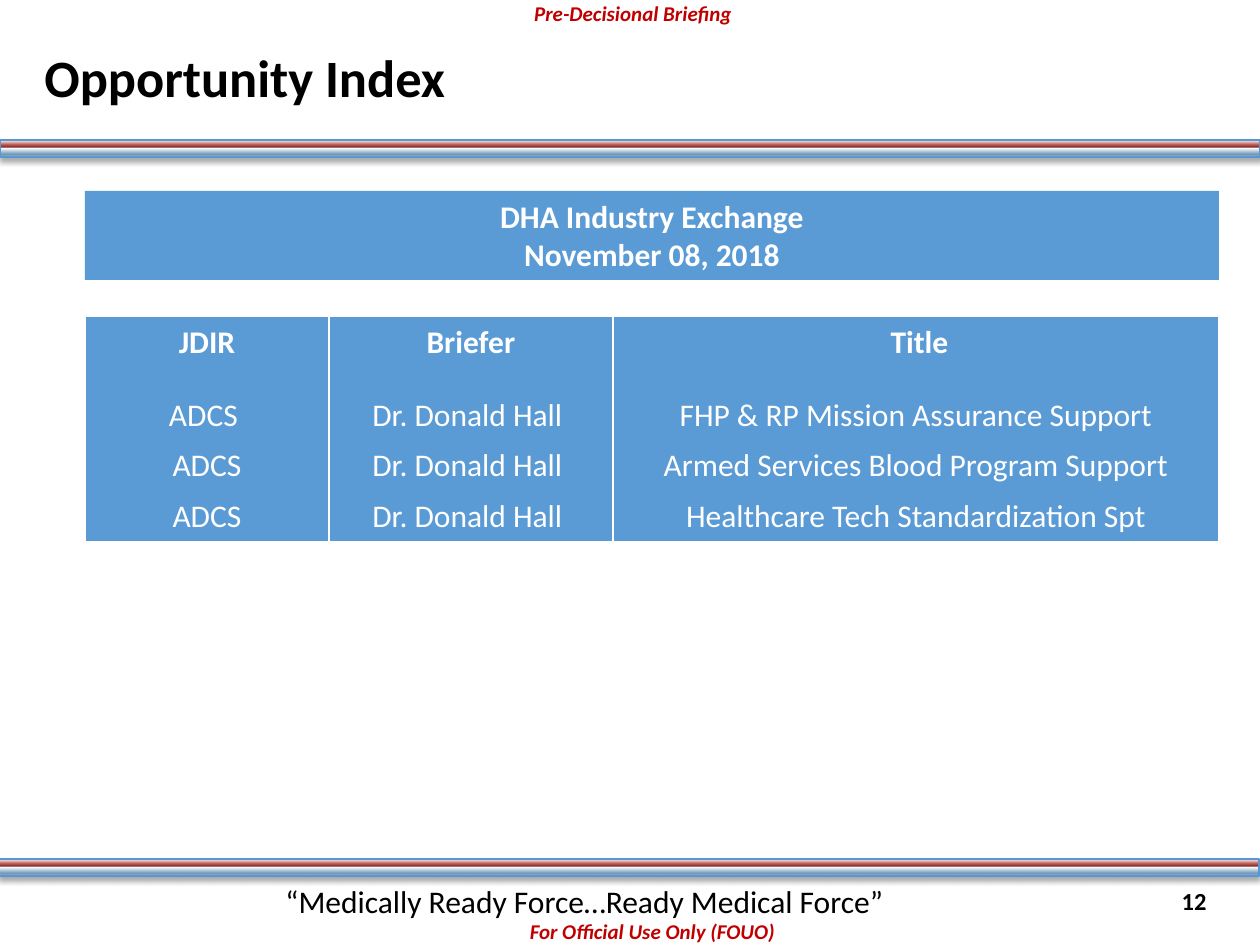
from lxml import etree
from pptx import Presentation
from pptx import util as u
from pptx.dml.color import RGBColor
from pptx.enum import shapes, text
from pptx.oxml import parse_xml
from pptx.oxml.ns import nsdecls, qn

BLUE, RED, WHITE, BLACK = "5B9BD5", "C00000", "FFFFFF", "000000"
CENTER, LEFT, RIGHT = text.PP_ALIGN.CENTER, text.PP_ALIGN.LEFT, text.PP_ALIGN.RIGHT
MIDDLE, TOP = text.MSO_ANCHOR.MIDDLE, text.MSO_ANCHOR.TOP


def px(*lengths):
    """Turn pixels, 126 to the inch, into a list of EMU."""
    return [u.Emu(round(length * 914400 / 126)) for length in lengths]


def write(frame, lines, size, color, align=CENTER, bold=False, italic=False):
    for i, line in enumerate(lines):
        paragraph = frame.paragraphs[0] if i == 0 else frame.add_paragraph()
        paragraph.text = line
        paragraph.alignment = align
        font = paragraph.font
        font.name, font.size, font.bold, font.italic = "Calibri", u.Pt(size), bold, italic
        font.color.rgb = RGBColor.from_string(color)


prs = Presentation()
prs.slide_width, prs.slide_height = px(1260, 945)
slide = prs.slides.add_slide(prs.slide_layouts[6])

# Striped bands below the title and above the footer
stripes = [(0, "DCEBF5"), (8, "83A7C3"), (13, "768FB9"), (21, "83A7C3"), (52, "FFFFFF"),
           (56, "9C6563"), (58, "80302D"), (71, "C0524E"), (94, "EBDAD4"), (100, "55261C")]
for left, top in [(0, 140), (-1, 859)]:
    band = slide.shapes.add_shape(shapes.MSO_SHAPE.RECTANGLE, *px(left, top, 1260, 17))
    band.line.color.rgb = RGBColor.from_string("5698D3")
    band.line.width = u.Pt(0.75)
    band.fill.gradient()
    band.fill.gradient_angle = 90
    props = band._element.spPr
    stops = props.find(".//" + qn("a:gsLst"))
    for stop in list(stops):
        stops.remove(stop)
    for percent, color in stripes:
        stop = etree.SubElement(stops, qn("a:gs"), pos=str(percent * 1000))
        etree.SubElement(stop, qn("a:srgbClr"), val=color)
    band.shadow.inherit = False
    props.find(qn("a:effectLst")).append(parse_xml(
        f'<a:outerShdw {nsdecls("a")} blurRad="39370" dist="22860" dir="5400000" rotWithShape="0">'
        '<a:srgbClr val="000000"><a:alpha val="35000"/></a:srgbClr></a:outerShdw>'))

# Markings, title, motto and page number
captions = [
    ("For Official Use Only (FOUO)", (267, 912, 771, 38), 12, RED, CENTER, True, True, TOP),
    ("Pre-Decisional Briefing", (510, -6, 246, 38), 12, RED, CENTER, True, True, TOP),
    ("Opportunity Index", (32, 0, 806, 154), 30, BLACK, LEFT, True, False, MIDDLE),
    ("“Medically Ready Force…Ready Medical Force”", (273, 876, 725, 50),
     18, BLACK, LEFT, False, False, TOP),
    ("12", (1135, 876, 84, 50), 14, BLACK, RIGHT, True, False, MIDDLE),
]
for words, place, size, color, align, bold, italic, anchor in captions:
    frame = slide.shapes.add_textbox(*px(*place)).text_frame
    frame.word_wrap = True
    frame.vertical_anchor = anchor
    write(frame, [words], size, color, align, bold, italic)

# Event banner
banner = slide.shapes.add_shape(shapes.MSO_SHAPE.RECTANGLE, *px(85, 191, 1134, 89))
banner.shadow.inherit = False
banner.fill.solid()
banner.fill.fore_color.rgb = RGBColor.from_string(BLUE)
banner.line.fill.background()
banner.text_frame.vertical_anchor = TOP
write(banner.text_frame, ["DHA Industry Exchange", "November 08, 2018"], 18, WHITE, bold=True)

# Briefing schedule
briefings = [
    ("JDIR", "Briefer", " Title"),
    ("ADCS ", "Dr. Donald Hall ", "FHP & RP Mission Assurance Support"),
    ("ADCS", "Dr. Donald Hall ", "Armed Services Blood Program Support"),
    ("ADCS", "Dr. Donald Hall ", "Healthcare Tech Standardization Spt"),
]
schedule = slide.shapes.add_table(4, 3, *px(85, 317, 1134, 224)).table
schedule.first_row = schedule.horz_banding = False
NO_STYLE = "{2D5ABB26-0587-4C30-8999-92F81FD0307C}"
schedule._tbl.tblPr.find(qn("a:tableStyleId")).text = NO_STYLE
for column, width in zip(schedule.columns, px(244, 284, 606)):
    column.width = width
for row, height in zip(schedule.rows, px(73, 50, 50, 51)):
    row.height = height
for r, briefing in enumerate(briefings):
    for c, words in enumerate(briefing):
        cell = schedule.cell(r, c)
        write(cell.text_frame, [words], 18, WHITE, bold=r == 0)
        cell.fill.solid()
        cell.fill.fore_color.rgb = RGBColor.from_string(BLUE)
        edges = ["lnL", "lnR"] + (["lnB"] if r == len(briefings) - 1 else [])
        for i, edge in enumerate(edges):
            cell._tc.tcPr.insert(i, parse_xml(
                f'<a:{edge} {nsdecls("a")} w="12700"><a:solidFill>'
                f'<a:srgbClr val="{WHITE}"/></a:solidFill></a:{edge}>'))

prs.save("out.pptx")
